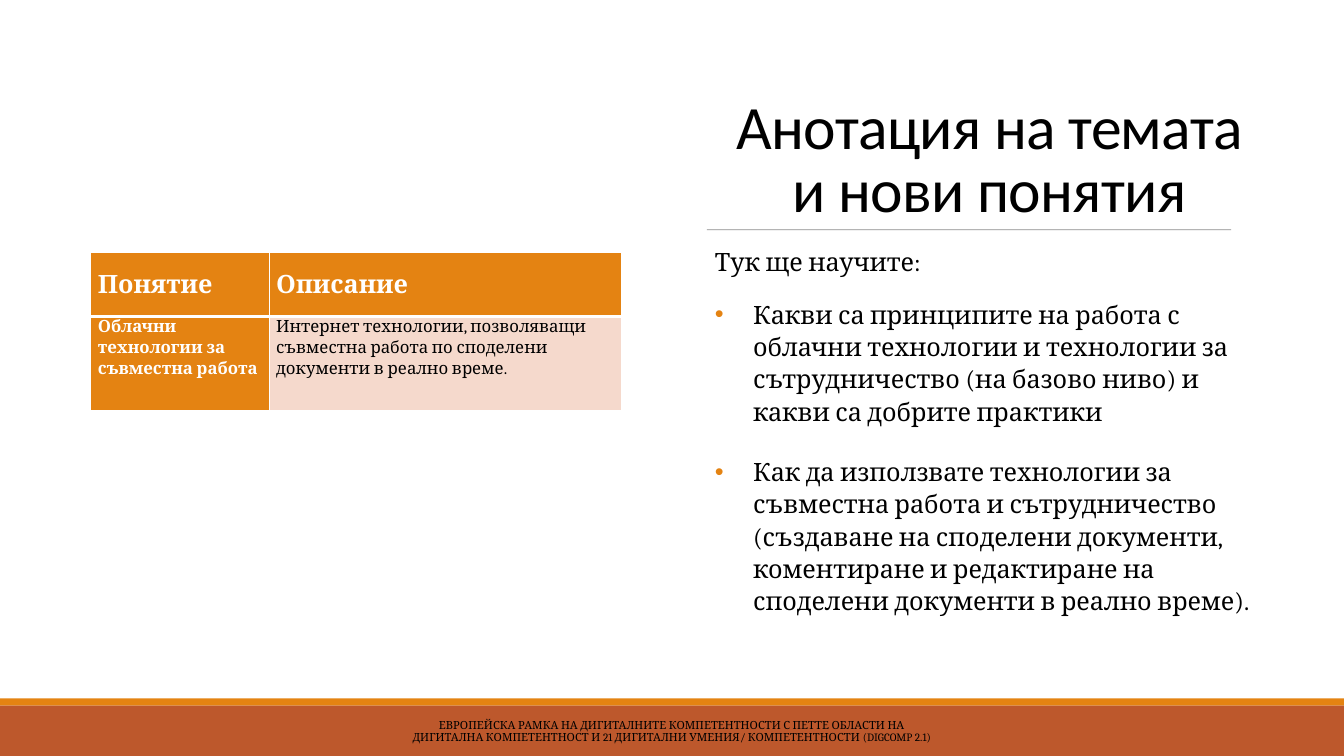
from dataclasses import dataclass

from lxml import etree
from pptx import Presentation
from pptx.dml.color import RGBColor
from pptx.enum.shapes import MSO_CONNECTOR, MSO_SHAPE
from pptx.enum.text import MSO_ANCHOR, MSO_AUTO_SIZE, PP_ALIGN
from pptx.oxml.ns import qn
from pptx.util import Inches, Pt

LEFT, CENTER = PP_ALIGN.LEFT, PP_ALIGN.CENTER
TOP, MIDDLE, BOTTOM = MSO_ANCHOR.TOP, MSO_ANCHOR.MIDDLE, MSO_ANCHOR.BOTTOM
RECTANGLE = MSO_SHAPE.RECTANGLE
STRAIGHT = MSO_CONNECTOR.STRAIGHT
NO_AUTOFIT = MSO_AUTO_SIZE.NONE
TITLE_ONLY = 5

WHITE, BLACK, GREY = "FFFFFF", "000000", "808080"
ORANGE, RUST, PINK = "E48312", "BD582C", "F5D9CC"
SLIDE_WIDTH, SLIDE_HEIGHT = 13.33, 7.5
TEXT_LEFT, TEXT_WIDTH = 7.01, 5.61


@dataclass
class Band:
    top: float
    height: float
    color: str


@dataclass
class CellStyle:
    text: str
    fill: str
    size: float
    color: str = WHITE
    bold: bool = True
    anchor: MSO_ANCHOR = TOP


BACKDROP = Band(0, 6.93, WHITE)
FOOTER_BANDS = [Band(6.93, 0.07, ORANGE), Band(7, 0.5, RUST)]
LESSONS = [
    "Какви са принципите на работа с облачни технологии и технологии за "
    "сътрудничество (на базово ниво) и какви са добрите практики",
    "Как да използвате технологии за съвместна работа и сътрудничество "
    "(създаване на споделени документи, коментиране и редактиране на "
    "споделени документи в реално време).",
]
CONCEPTS = [
    [CellStyle("Понятие", ORANGE, 18, anchor=MIDDLE),
     CellStyle("Описание", ORANGE, 18, anchor=MIDDLE)],
    [CellStyle("Облачни технологии за съвместна работа", ORANGE, 12),
     CellStyle("Интернет технологии, позволяващи съвместна работа по "
               "споделени документи в реално време.", PINK, 12, BLACK, False)],
]
COLUMN_WIDTHS = [1.77, 3.5]
ROW_HEIGHTS = [0.64, 0.93]


def rgb(color: str) -> RGBColor:
    return RGBColor.from_string(color)


def write(paragraph, text: str, *, size: float, font: str = "Cambria",
          color: str = BLACK, bold: bool = False, align: PP_ALIGN = LEFT,
          line_spacing: float = 1.07, before: float = 0, after: float = 8,
          tracking: int = 0) -> None:
    paragraph.alignment = align
    paragraph.line_spacing = line_spacing
    paragraph.space_before = Pt(before)
    paragraph.space_after = Pt(after)
    run = paragraph.add_run()
    run.text = text
    run.font.name = font
    run.font.size = Pt(size)
    run.font.bold = bold
    run.font.color.rgb = rgb(color)
    if tracking:
        run.font._element.set("spc", str(tracking))


def add_bullet(paragraph) -> None:
    properties = paragraph._p.get_or_add_pPr()
    properties.set("marL", str(Inches(0.38)))
    properties.set("indent", str(-Inches(0.38)))
    bullet_color = etree.SubElement(properties, qn("a:buClr"))
    etree.SubElement(bullet_color, qn("a:srgbClr"), val=ORANGE)
    etree.SubElement(properties, qn("a:buFont"), typeface="Arial")
    etree.SubElement(properties, qn("a:buChar"), char="•")


def format_frame(text_frame, anchor: MSO_ANCHOR, horizontal: float,
                 vertical: float) -> None:
    text_frame.word_wrap = True
    text_frame.auto_size = NO_AUTOFIT
    text_frame.vertical_anchor = anchor
    text_frame.margin_left = text_frame.margin_right = Inches(horizontal)
    text_frame.margin_top = text_frame.margin_bottom = Inches(vertical)


def add_text_frame(slide, left: float, top: float, width: float, height: float,
                   anchor: MSO_ANCHOR, margin: float):
    box = slide.shapes.add_textbox(Inches(left), Inches(top), Inches(width), Inches(height))
    format_frame(box.text_frame, anchor, margin, margin)
    return box.text_frame


def add_band(slide, band: Band):
    shape = slide.shapes.add_shape(RECTANGLE, 0, Inches(band.top),
                                   Inches(SLIDE_WIDTH), Inches(band.height))
    shape.shadow.inherit = False
    shape.fill.solid()
    shape.fill.fore_color.rgb = rgb(band.color)
    shape.line.fill.background()
    return shape


def add_title(slide) -> None:
    title = slide.shapes.title
    title.left, title.top = Inches(TEXT_LEFT), Inches(0.69)
    title.width, title.height = Inches(TEXT_WIDTH), Inches(1.59)
    format_frame(title.text_frame, BOTTOM, 0.1, 0.05)
    write(title.text_frame.paragraphs[0], "Анотация на темата и нови понятия",
          size=44, font="Calibri", align=CENTER, line_spacing=0.85, after=0, tracking=-50)


def add_title_rule(slide) -> None:
    rule = slide.shapes.add_connector(STRAIGHT, Inches(TEXT_LEFT), Inches(2.28),
                                      Inches(12.21), Inches(2.28))
    rule.line.color.rgb = rgb(GREY)
    rule.line.width = Pt(0.5)
    for color in rule.element.spPr.iter(qn("a:srgbClr")):
        etree.SubElement(color, qn("a:alpha"), val="90000")
    etree.SubElement(rule.element.spPr, qn("a:effectLst"))


def add_lessons(slide) -> None:
    text_frame = add_text_frame(slide, TEXT_LEFT, 2.4, TEXT_WIDTH, 4.01, TOP, 0.08)
    write(text_frame.paragraphs[0], "Тук ще научите:", size=18,
          line_spacing=0.9, before=12, after=2)
    for lesson in LESSONS:
        paragraph = text_frame.add_paragraph()
        write(paragraph, lesson, size=18, before=12)
        add_bullet(paragraph)


def set_borders(cell, widths: dict[str, float]) -> None:
    properties = cell._tc.get_or_add_tcPr()
    for position, (side, width) in enumerate(widths.items()):
        border = etree.Element(qn(f"a:{side}"), w=str(Pt(width)))
        fill = etree.SubElement(border, qn("a:solidFill"))
        etree.SubElement(fill, qn("a:srgbClr"), val=WHITE)
        properties.insert(position, border)


def add_concept_table(slide) -> None:
    table = slide.shapes.add_table(len(ROW_HEIGHTS), len(COLUMN_WIDTHS), Inches(0.9),
                                   Inches(2.5), Inches(sum(COLUMN_WIDTHS)),
                                   Inches(sum(ROW_HEIGHTS))).table
    table.horz_banding = False
    for column, width in zip(table.columns, COLUMN_WIDTHS):
        column.width = Inches(width)
    for row_index, styles in enumerate(CONCEPTS):
        table.rows[row_index].height = Inches(ROW_HEIGHTS[row_index])
        header = row_index == 0
        borders = {"lnL": 1, "lnR": 1, "lnT": 1 if header else 3, "lnB": 3 if header else 1}
        for column_index, style in enumerate(styles):
            cell = table.cell(row_index, column_index)
            cell.margin_left = cell.margin_right = Inches(0.07)
            cell.margin_top = cell.margin_bottom = 0
            cell.vertical_anchor = style.anchor
            cell.fill.solid()
            cell.fill.fore_color.rgb = rgb(style.fill)
            set_borders(cell, borders)
            write(cell.text_frame.paragraphs[0], style.text, size=style.size,
                  color=style.color, bold=style.bold)


def add_footer(slide) -> None:
    text_frame = add_text_frame(slide, 4.03, 7.06, 5.27, 0.4, MIDDLE, 0.04)
    write(text_frame.paragraphs[0],
          "ЕВРОПЕЙСКА РАМКА НА ДИГИТАЛНИТЕ КОМПЕТЕНТНОСТИ С ПЕТТЕ ОБЛАСТИ НА "
          "ДИГИТАЛНА КОМПЕТЕНТНОСТ И 21 ДИГИТАЛНИ УМЕНИЯ/ КОМПЕТЕНТНОСТИ (DIGCOMP 2.1)",
          size=8, align=CENTER, line_spacing=0.9, after=6)


def main() -> None:
    presentation = Presentation()
    presentation.slide_width = Inches(SLIDE_WIDTH)
    presentation.slide_height = Inches(SLIDE_HEIGHT)
    slide = presentation.slides.add_slide(presentation.slide_layouts[TITLE_ONLY])
    backdrop = add_band(slide, BACKDROP)
    slide.shapes.title.element.addprevious(backdrop.element)
    add_title(slide)
    add_title_rule(slide)
    add_lessons(slide)
    for band in FOOTER_BANDS:
        add_band(slide, band)
    add_footer(slide)
    add_concept_table(slide)
    presentation.save("out.pptx")


if __name__ == "__main__":
    main()
